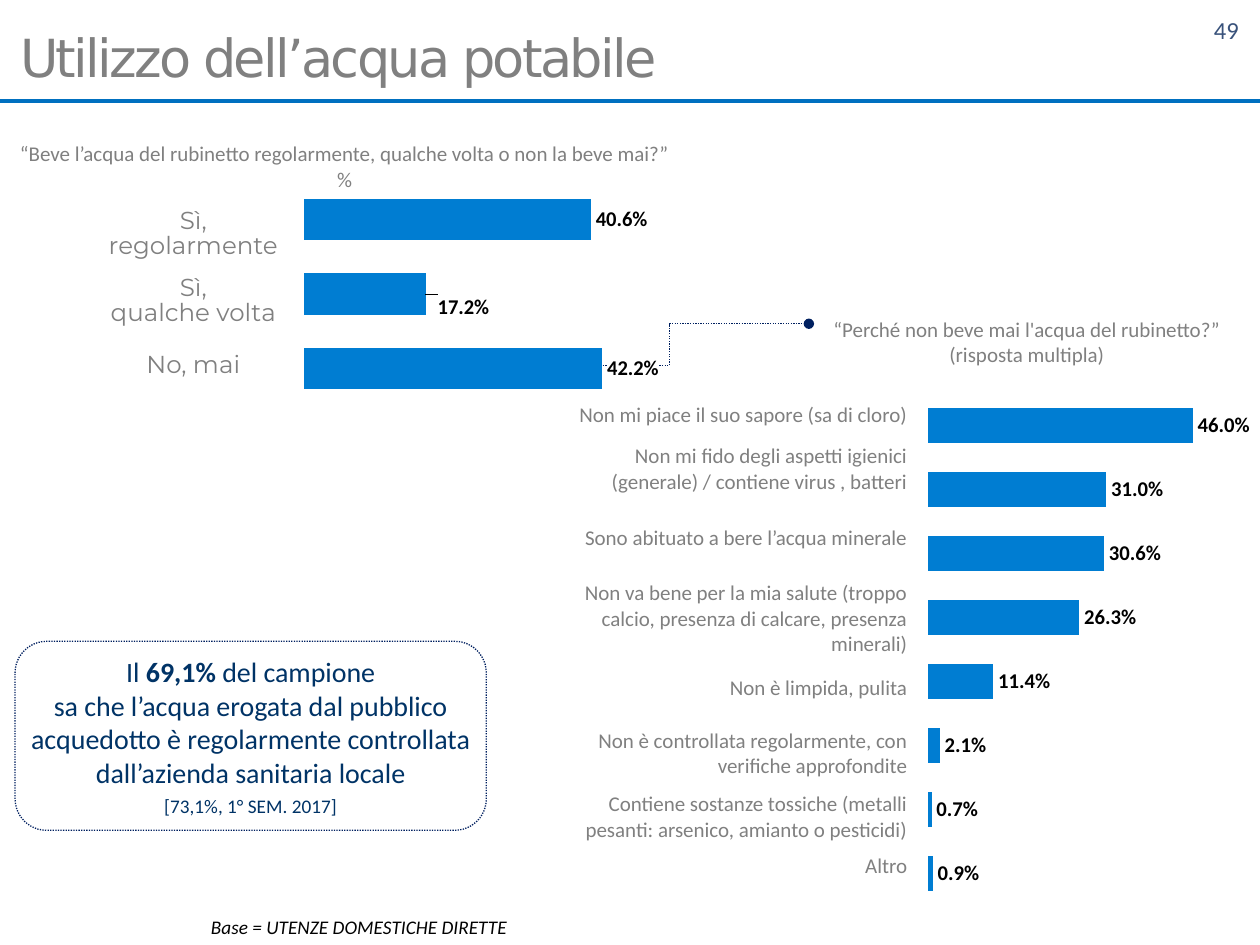
"""Build the slide on drinking-water use: two bar charts, a reasons table and a callout."""
from dataclasses import dataclass

from lxml import etree
from pptx import Presentation
from pptx.chart.data import CategoryChartData
from pptx.dml.color import RGBColor
from pptx.enum.chart import XL_CHART_TYPE, XL_LABEL_POSITION
from pptx.enum.dml import MSO_LINE
from pptx.enum.shapes import MSO_CONNECTOR, MSO_SHAPE
from pptx.enum.text import MSO_ANCHOR, PP_ALIGN
from pptx.oxml import parse_xml
from pptx.oxml.ns import nsdecls, qn
from pptx.util import Inches, Pt

LEFT, CENTER, RIGHT = PP_ALIGN.LEFT, PP_ALIGN.CENTER, PP_ALIGN.RIGHT
TOP, MIDDLE = MSO_ANCHOR.TOP, MSO_ANCHOR.MIDDLE
BAR, OUTSIDE_END = XL_CHART_TYPE.BAR_CLUSTERED, XL_LABEL_POSITION.OUTSIDE_END
ROUNDED, DOTTED = MSO_SHAPE.ROUNDED_RECTANGLE, MSO_LINE.ROUND_DOT
STRAIGHT, ELBOW = MSO_CONNECTOR.STRAIGHT, MSO_CONNECTOR.ELBOW
WIDTH, HEIGHT = Inches(10), Inches(7.5)
COLUMNS, ROWS = 100, 75
PERCENT = "0.0%"


@dataclass(frozen=True)
class Style:
    """Type style of a run."""
    size: float
    color: str
    font: str = "Calibri"
    bold: bool = False
    italic: bool = False


@dataclass(frozen=True)
class Theme:
    """Colours and type styles of the slide."""
    rule: str = "0070C0"
    bar: str = "007DD2"
    outline: str = "002060"
    paper: str = "FFFFFF"
    title: Style = Style(30, "808080", "DejaVu Sans")
    number: Style = Style(14, "39527B")
    text: Style = Style(12, "808080")
    answer: Style = Style(14, "808080", "Montserrat")
    callout: Style = Style(16, "003366")
    strong: Style = Style(16, "003366", bold=True)
    small: Style = Style(11, "003366")
    base: Style = Style(11, "000000", italic=True)
    value: Style = Style(12, "000000", bold=True)


@dataclass(frozen=True)
class Box:
    """Area in grid columns and rows."""
    column: float
    row: float
    columns: float
    rows: float

    def lengths(self) -> tuple:
        """Return left, top, width and height."""
        return across(self.column), down(self.row), across(self.columns), down(self.rows)


@dataclass(frozen=True)
class Line:
    """Paragraph made of (text, style) runs."""
    runs: tuple
    before: float = 0
    spacing: float = 0


@dataclass(frozen=True)
class Bars:
    """Bar chart data and place."""
    box: Box
    values: tuple
    maximum: float


THEME = Theme()
ANSWERS = ((16.2, 5, ("Sì, regolarmente",)), (21.5, 5, ("Sì,", "qualche volta")), (27.6, 3.1, ("No, mai",)))
ANSWER_BARS = Bars(Box(22.8, 13.1, 29.5, 20.5), (0.406, 0.172, 0.422), 0.49)
REASON_BARS = Bars(Box(72.4, 28.1, 26.8, 46.9),
                   (0.46, 0.31, 0.306, 0.263, 0.114, 0.021, 0.007, 0.009), 0.55)
REASONS = (
    ("Non mi piace il suo sapore (sa di cloro)", 3.9),
    ("Non mi fido degli aspetti igienici (generale) / contiene virus , batteri", 4.6),
    ("Sono abituato a bere l’acqua minerale", 6.4),
    ("Non va bene per la mia salute (troppo calcio, presenza di calcare, presenza minerali)", 6.4),
    ("Non è limpida, pulita", 4.6),
    ("Non è controllata regolarmente, con verifiche approfondite", 5.8),
    ("Contiene sostanze tossiche (metalli pesanti: arsenico, amianto o pesticidi)", 4.3),
    ("Altro", 3.4),
)
CALLOUT = (
    Line((("Il ", THEME.callout), ("69,1%", THEME.strong), (" del campione", THEME.callout))),
    Line((("sa che l’acqua erogata dal pubblico acquedotto è regolarmente controllata "
           "dall’azienda sanitaria locale", THEME.callout),)),
    Line((("[73,1%, 1° SEM. 2017]", THEME.small),), before=3),
)


def across(columns: float) -> int:
    """Convert grid columns to a length."""
    return round(WIDTH * columns / COLUMNS)


def down(rows: float) -> int:
    """Convert grid rows to a length."""
    return round(HEIGHT * rows / ROWS)


def set_font(font, style: Style) -> None:
    """Apply a type style to a font."""
    font.name, font.size = style.font, Pt(style.size)
    font.bold, font.italic = style.bold, style.italic
    font.color.rgb = RGBColor.from_string(style.color)


def write(frame, lines, align=CENTER, anchor=TOP, insets=(0.1, 0.05, 0.1, 0.05)) -> None:
    """Fill a text frame run by run."""
    frame.word_wrap, frame.vertical_anchor = True, anchor
    frame.margin_left, frame.margin_top, frame.margin_right, frame.margin_bottom = map(Inches, insets)
    for index, line in enumerate(lines):
        paragraph = frame.add_paragraph() if index else frame.paragraphs[0]
        paragraph.alignment = align
        if line.before:
            paragraph.space_before = Pt(line.before)
        if line.spacing:
            paragraph.line_spacing = Pt(line.spacing)
        for text, style in line.runs:
            run = paragraph.add_run()
            run.text = text
            set_font(run.font, style)


def add_text(slide, box: Box, texts, style: Style, align=CENTER, spacing: float = 0) -> None:
    """Add a text box with one style."""
    shape = slide.shapes.add_textbox(*box.lengths())
    write(shape.text_frame, [Line(((text, style),), spacing=spacing) for text in texts], align)


def add_panel(slide, box: Box, lines, inset: float, outlined: bool) -> None:
    """Add a rounded panel, either outlined or plainly filled."""
    shape = slide.shapes.add_shape(ROUNDED, *box.lengths())
    shape.shadow.inherit = False
    if outlined:
        shape.fill.background()
        shape.line.color.rgb = RGBColor.from_string(THEME.outline)
        shape.line.width, shape.line.dash_style = Pt(0.75), DOTTED
    else:
        shape.fill.solid()
        shape.fill.fore_color.rgb = RGBColor.from_string(THEME.paper)
        shape.line.fill.background()
    write(shape.text_frame, lines, anchor=MIDDLE, insets=(inset,) * 4)


def add_line(slide, kind, start, end, color: str, width: float):
    """Add a connector between two grid points."""
    shape = slide.shapes.add_connector(kind, across(start[0]), down(start[1]), across(end[0]), down(end[1]))
    shape.line.color.rgb = RGBColor.from_string(color)
    shape.line.width = Pt(width)
    etree.SubElement(shape._element.spPr, qn("a:effectLst"))
    return shape


def chart_xml(tag: str, content: str = "", attributes: str = ""):
    """Return a chart element."""
    return parse_xml(f'<c:{tag} {nsdecls("c", "a")} {attributes}>{content}</c:{tag}>')


def manual_layout(**settings):
    """Return a manual chart layout."""
    content = "".join(f'<c:{name} val="{value}"/>' for name, value in settings.items())
    return chart_xml("layout", f"<c:manualLayout>{content}</c:manualLayout>")


def add_bars(slide, bars: Bars):
    """Add a bar chart without axes and return its series."""
    data = CategoryChartData(number_format=PERCENT)
    data.categories = [str(number + 1) for number in range(len(bars.values))]
    data.add_series("Series 1", bars.values)
    chart = slide.shapes.add_chart(BAR, *bars.box.lengths(), data).chart
    chart.has_legend = chart.has_title = False
    set_font(chart.font, Style(11, THEME.value.color))
    chart.category_axis.visible = chart.value_axis.visible = False
    chart.category_axis.reverse_order = True
    chart.value_axis.has_major_gridlines = False
    chart.value_axis.minimum_scale, chart.value_axis.maximum_scale = 0, bars.maximum
    plot = chart.plots[0]
    plot.gap_width, plot.vary_by_categories = 80, False
    area = chart._chartSpace.chart.plotArea
    for layout in area.findall(qn("c:layout")):
        area.remove(layout)
    area.insert(0, manual_layout(layoutTarget="inner", xMode="edge", yMode="edge",
                                 x=0.046, y=0.067, w=0.952, h=0.866))
    series = plot.series[0]
    series.format.fill.solid()
    series.format.fill.fore_color.rgb = RGBColor.from_string(THEME.bar)
    labels = series.data_labels
    labels.show_value, labels.position = True, OUTSIDE_END
    labels.number_format, labels.number_format_is_linked = PERCENT, False
    set_font(labels.font, THEME.value)
    fill = f'<a:solidFill><a:srgbClr val="{THEME.paper}"/></a:solidFill>'
    labels._element.find(qn("c:numFmt")).addnext(chart_xml("spPr", fill))
    return series


def shift_label(series, index: int, x: float, y: float) -> None:
    """Move one value label by shares of the chart."""
    label = series.points[index].data_label
    set_font(label.font, THEME.value)
    label.position = OUTSIDE_END
    element = series.data_labels._element.find(qn("c:dLbl"))
    element.insert(1, manual_layout(x=x, y=y))
    element.insert(2, chart_xml("numFmt", attributes=f'formatCode="{PERCENT}" sourceLinked="0"'))


def add_reasons(slide, box: Box) -> None:
    """Add the one-column table of reasons."""
    table = slide.shapes.add_table(len(REASONS), 1, *box.lengths()).table
    table.first_row = table.horz_banding = False
    for index, (text, rows) in enumerate(REASONS):
        table.rows[index].height = down(rows)
        cell = table.cell(index, 0)
        cell.fill.background()
        write(cell.text_frame, [Line(((text, THEME.text),))], RIGHT)
        cell.vertical_anchor = MIDDLE
        cell.margin_left = cell.margin_top = cell.margin_right = Inches(0.01)
        cell.margin_bottom = 0


def main() -> None:
    """Build and save the slide."""
    presentation = Presentation()
    presentation.slide_width, presentation.slide_height = WIDTH, HEIGHT
    slide = presentation.slides.add_slide(presentation.slide_layouts[5])
    add_line(slide, STRAIGHT, (0, 8), (COLUMNS, 8), THEME.rule, 2)
    add_text(slide, Box(76, 0.7, 23.3, 4), ("49",), THEME.number, RIGHT)
    title = slide.shapes.title
    title.left, title.top, title.width, title.height = Box(0, 1.3, 97.2, 6.3).lengths()
    write(title.text_frame, [Line((("Utilizzo dell’acqua potabile", THEME.title),))],
          LEFT, MIDDLE, (0.16, 0.05, 0.1, 0.05))
    title.text_frame.paragraphs[0].runs[0]._r.get_or_add_rPr().set("spc", "-150")
    question = "“Beve l’acqua del rubinetto regolarmente, qualche volta o non la beve mai?”"
    add_text(slide, Box(0, 10.7, 54.7, 5), (question, "%"), THEME.text)
    base = Line((("Base = UTENZE DOMESTICHE DIRETTE", THEME.base),))
    add_panel(slide, Box(16.1, 72.1, 24.8, 2.9), (base,), 0, False)
    add_panel(slide, Box(1.2, 50.9, 37.4, 15), CALLOUT, 0.04, True)
    link = add_line(slide, ELBOW, (42.1, 29), (64.2, 25.7), THEME.outline, 0.75)
    link.line.dash_style = DOTTED
    etree.SubElement(link.line._get_or_add_ln(), qn("a:tailEnd"), type="oval")
    for row, rows, texts in ANSWERS:
        add_text(slide, Box(6.7, row, 17.3, rows), texts, THEME.answer, spacing=14)
    reason_question = "“Perché non beve mai l'acqua del rubinetto?” (risposta multipla)"
    add_text(slide, Box(64.2, 24.6, 34.6, 5), (reason_question,), THEME.text)
    shift_label(add_bars(slide, ANSWER_BARS), 1, 0.02, 0.05)
    add_bars(slide, REASON_BARS)
    add_reasons(slide, Box(45.3, 31, 26.8, 39.5))
    presentation.save("out.pptx")


if __name__ == "__main__":
    main()
